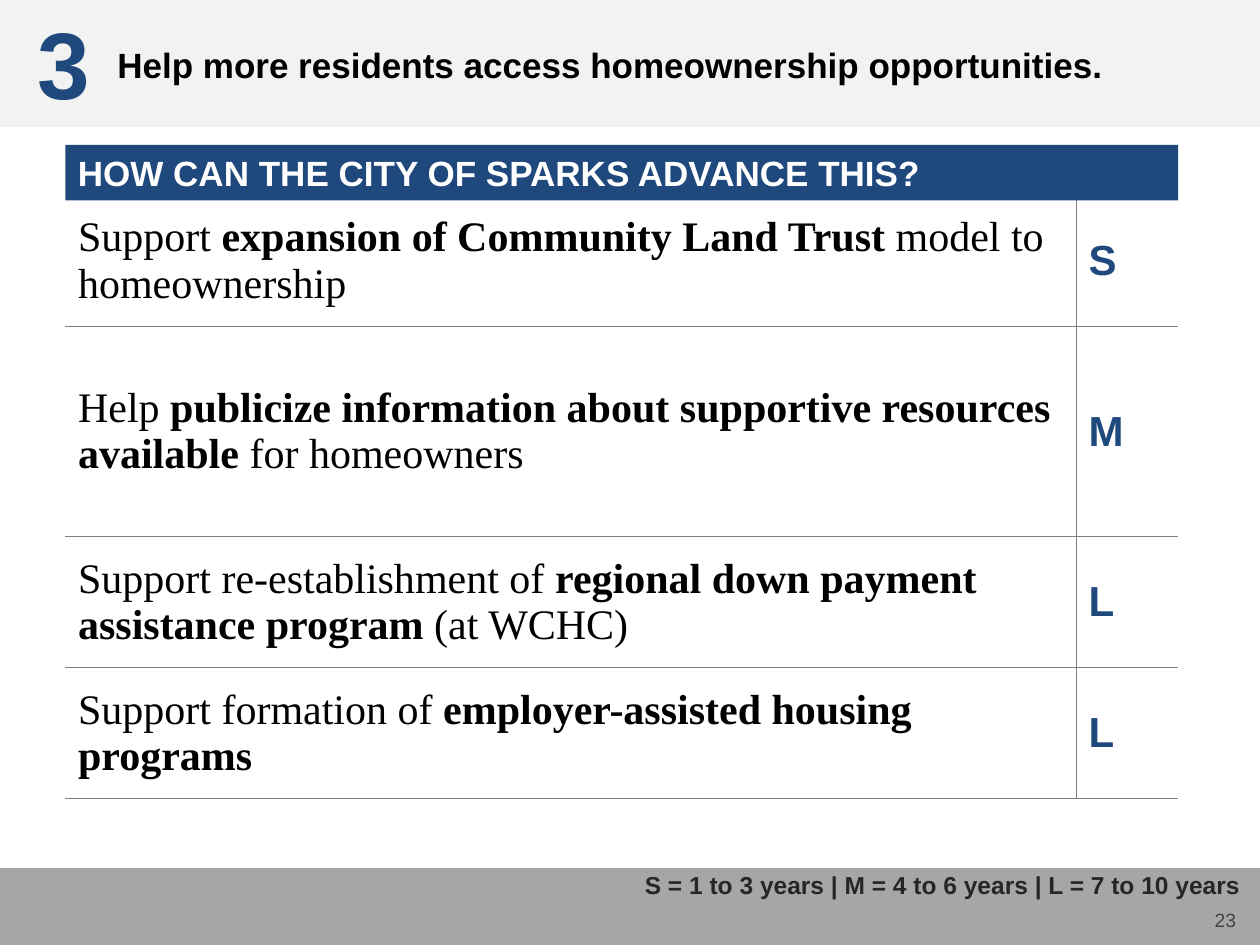
from dataclasses import dataclass

from lxml import etree
from pptx import Presentation
from pptx.dml import color
from pptx.enum import shapes, text
from pptx.oxml import ns
from pptx.util import Cm, Pt

NO_STYLE = "{2D5ABB26-0587-4C30-8999-92F81FD0307C}"
ACTIONS = [
    (2.64, "S", [("Support ", False), ("expansion of Community Land Trust ", True),
                 ("model to homeownership", False)]),
    (4.24, "M", [("Help ", False),
                 ("publicize information about supportive resources available", True),
                 (" for homeowners", False)]),
    (2.64, "L", [("Support re-establishment of", False),
                 (" regional down payment assistance program", True),
                 (" (at WCHC)", False)]),
    (2.64, "L", [("Support formation of ", False),
                 ("employer-assisted housing programs", True)]),
]


@dataclass(frozen=True)
class Theme:
    """Colours, fonts and type sizes of the deck."""
    navy: str = "1F497D"
    black: str = "000000"
    white: str = "FFFFFF"
    pale: str = "F2F2F2"
    grey: str = "A6A6A6"
    rule: str = "808080"
    legend: str = "262626"
    page: str = "424342"
    sans: str = "Arial"
    serif: str = "Times New Roman"
    number_size: int = 54
    body_size: int = 24
    heading_size: int = 20
    legend_size: int = 14
    page_size: int = 11


class SlideBuilder:
    """Draws each kind of element on the current slide in one theme."""

    def __init__(self, deck, theme):
        self.theme = theme
        self.slide = deck.slides.add_slide(deck.slide_layouts[5])

    def style(self, paragraph, size, ink, bold=True, font=None):
        """Sets the font that all runs of a paragraph share."""
        paragraph.font.name = font or self.theme.sans
        paragraph.font.size = Pt(size)
        paragraph.font.bold = bold
        paragraph.font.color.rgb = color.RGBColor.from_string(ink)

    def fill_text(self, shape, words, size, ink, bold=True, align=text.PP_ALIGN.LEFT,
                  anchor=text.MSO_ANCHOR.TOP, wrap=True):
        """Fills a shape with one styled paragraph."""
        frame = shape.text_frame
        frame.text = words
        frame.word_wrap = wrap
        frame.auto_size = text.MSO_AUTO_SIZE.NONE
        frame.vertical_anchor = anchor
        frame.paragraphs[0].alignment = align
        self.style(frame.paragraphs[0], size, ink, bold)
        return frame

    def band(self, left, top, width, height, fill):
        """Adds a plain filled rectangle."""
        band = self.slide.shapes.add_shape(
            shapes.MSO_SHAPE.RECTANGLE, Cm(left), Cm(top), Cm(width), Cm(height))
        band.shadow.inherit = False
        band.fill.solid()
        band.fill.fore_color.rgb = color.RGBColor.from_string(fill)
        band.line.fill.background()
        return band

    def title(self, left, top, width, height, words):
        """Places the title placeholder above what is already drawn."""
        title = self.slide.shapes.title
        title.left, title.top = Cm(left), Cm(top)
        title.width, title.height = Cm(width), Cm(height)
        self.fill_text(title, words, self.theme.heading_size, self.theme.black)
        title.element.getparent().append(title.element)

    def label(self, left, top, width, height, words, size, ink, **options):
        """Adds a text box and returns its frame."""
        box = self.slide.shapes.add_textbox(Cm(left), Cm(top), Cm(width), Cm(height))
        return self.fill_text(box, words, size, ink, **options)

    def borders(self, cell, sides):
        """Draws thin rules on the given sides of a cell."""
        props = cell._tc.get_or_add_tcPr()
        for position, side in enumerate(sides):
            line = etree.Element(ns.qn(f"a:ln{side}"), w=str(Pt(0.5)))
            fill = etree.SubElement(line, ns.qn("a:solidFill"))
            etree.SubElement(fill, ns.qn("a:srgbClr"), val=self.theme.rule)
            props.insert(position, line)

    def action_table(self, left, top, widths, actions):
        """Adds the table of actions and their time frames."""
        height = sum(row_height for row_height, _, _ in actions)
        frame = self.slide.shapes.add_table(
            len(actions), len(widths), Cm(left), Cm(top), Cm(sum(widths)), Cm(height))
        table = frame.table
        table.first_row = table.horz_banding = False
        table._tbl.tblPr.find(ns.qn("a:tableStyleId")).text = NO_STYLE
        for column, width in zip(table.columns, widths):
            column.width = Cm(width)
        for index, (row_height, term, pieces) in enumerate(actions):
            row = table.rows[index]
            row.height = Cm(row_height)
            action, period = row.cells
            top_rule = "T" if index else ""
            for cell, side in ((action, "R"), (period, "L")):
                cell.vertical_anchor = text.MSO_ANCHOR.MIDDLE
                cell.fill.background()
                self.borders(cell, side + top_rule + "B")
            wording = action.text_frame.paragraphs[0]
            for words, bold in pieces:
                run = wording.add_run()
                run.text = words
                run.font.bold = bold
            self.style(wording, self.theme.body_size, self.theme.black,
                       False, self.theme.serif)
            period.text_frame.text = term
            self.style(period.text_frame.paragraphs[0], self.theme.body_size,
                       self.theme.navy)


def main():
    """Builds the homeownership slide."""
    deck = Presentation()
    deck.slide_width, deck.slide_height = Cm(25.4), Cm(19.05)
    theme = Theme()
    page = SlideBuilder(deck, theme)
    page.band(0, 17.5, 25.4, 1.55, theme.grey)
    page.band(0, 0, 25.4, 2.56, theme.pale)
    page.title(2.11, 0.74, 22.8, 1.12,
               "Help more residents access homeownership opportunities.")
    page.label(0.51, -0.02, 1.6, 2.56, "3", theme.number_size, theme.navy, wrap=False)
    number = page.label(19, 17.75, 5.92, 1.02, "23", theme.page_size, theme.page,
                        bold=False, align=text.PP_ALIGN.RIGHT,
                        anchor=text.MSO_ANCHOR.BOTTOM)
    number.margin_left = number.margin_right = 0
    number.margin_top = number.margin_bottom = 0
    page.label(12.75, 17.42, 14.66, 0.86,
               "S = 1 to 3 years | M = 4 to 6 years | L = 7 to 10 years",
               theme.legend_size, theme.legend)
    page.action_table(1.32, 3.94, (20.37, 2.06), ACTIONS)
    heading = page.band(1.32, 2.92, 22.43, 1.12, theme.navy)
    page.fill_text(heading, "HOW CAN THE CITY OF SPARKS ADVANCE THIS?",
                   theme.heading_size, theme.white)
    deck.save("out.pptx")


if __name__ == "__main__":
    main()
